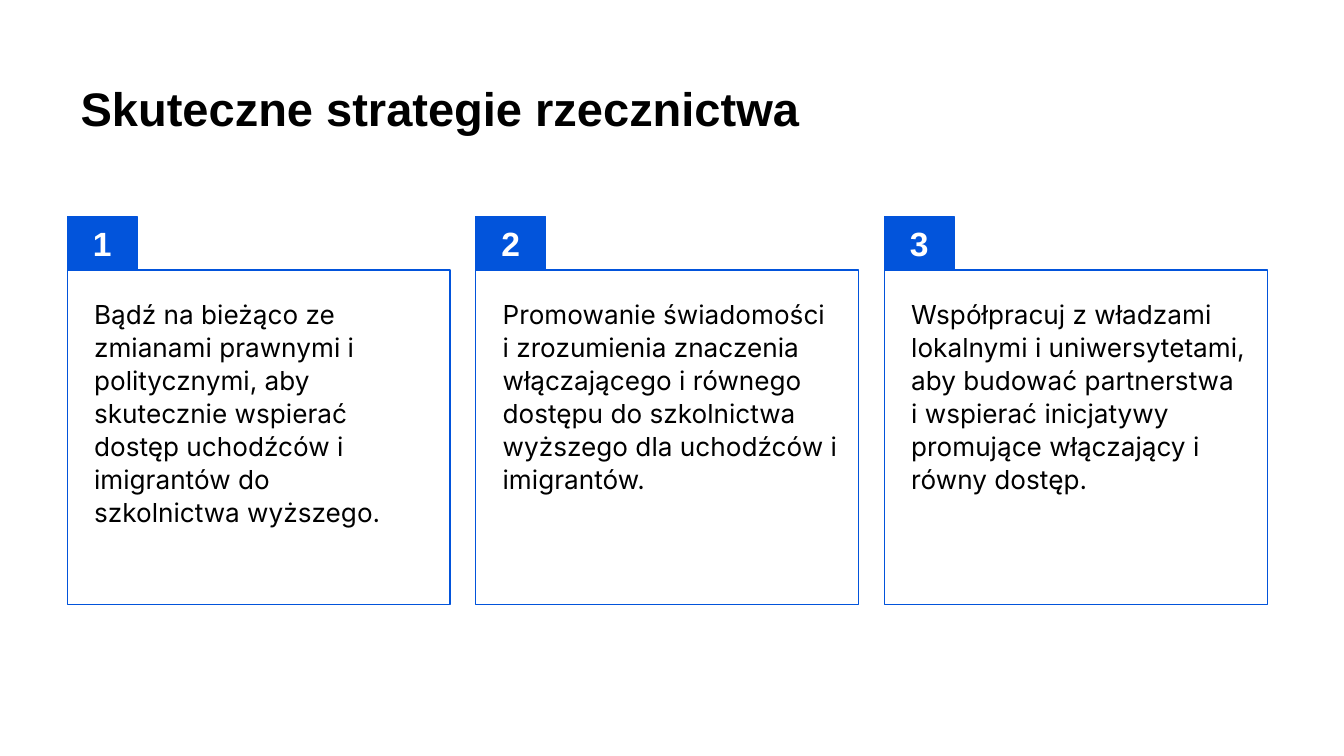
from lxml.etree import SubElement
from pptx import Presentation
from pptx.dml.color import RGBColor
from pptx.enum.shapes import MSO_SHAPE
from pptx.enum.text import MSO_ANCHOR, MSO_AUTO_SIZE, PP_ALIGN
from pptx.oxml.ns import qn
from pptx.util import Inches, Pt

COLORS = {"blue": "0254DB", "white": "FFFFFF", "black": "000000"}
LEFT, STEP, WIDTH = 0.5, 3.04, 2.85
TOP, HEIGHT, TAB = 2.01, 2.49, 0.4

# Text and right inset of each card
CARDS = [
    ("Bądź na bieżąco ze zmianami prawnymi i politycznymi, aby skutecznie "
     "wspierać dostęp uchodźców i imigrantów do szkolnictwa wyższego.", 0.2),
    ("Promowanie świadomości i zrozumienia znaczenia włączającego i równego "
     "dostępu do szkolnictwa wyższego dla uchodźców i imigrantów.", 0.15),
    ("Współpracuj z władzami lokalnymi i uniwersytetami, aby budować "
     "partnerstwa i wspierać inicjatywy promujące włączający i równy dostęp.",
     0.15),
]


def color(name):
    return RGBColor.from_string(COLORS[name])


def place(shape, left, top, width, height):
    shape.left, shape.top = Inches(left), Inches(top)
    shape.width, shape.height = Inches(width), Inches(height)


def paint(shape, fill):
    shape.fill.solid()
    shape.fill.fore_color.rgb = color(fill)
    shape.line.color.rgb = color("blue")
    shape.line.width = Pt(0.75)


def write(shape, text, font, size, ink, bold, align, anchor, insets):
    frame = shape.text_frame
    frame.text = text
    frame.word_wrap = True
    frame.auto_size = MSO_AUTO_SIZE.NONE
    frame.vertical_anchor = anchor
    (frame.margin_left, frame.margin_top,
     frame.margin_right, frame.margin_bottom) = map(Inches, insets)
    para = frame.paragraphs[0]
    para.alignment = align
    style = para.runs[0].font
    style.name, style.size, style.bold = font, Pt(size), bold
    style.color.rgb = color(ink)
    return para


def add_title(shape, text):
    place(shape, LEFT, 0.49, 9, 0.63)
    write(shape, text, "Arial", 25.2, "black", True,
          PP_ALIGN.LEFT, MSO_ANCHOR.MIDDLE, [0.1] * 4)


def add_card(shape, left, text, inset):
    place(shape, left, TOP, WIDTH, HEIGHT)
    paint(shape, "white")
    # Mostly transparent fill
    tint = shape.element.spPr.find(qn("a:solidFill"))[0]
    SubElement(tint, qn("a:alpha")).set("val", "10000")
    para = write(shape, text, "Inter", 14, "black", False,
                 PP_ALIGN.LEFT, MSO_ANCHOR.TOP, [0.2, 0.2, inset, 0.1])
    para.line_spacing = 1.05
    para.space_before, para.space_after = Pt(0), Pt(10)
    # No bullet and no hanging indent
    props = para._p.get_or_add_pPr()
    props.set("marL", "0")
    props.set("indent", "0")
    SubElement(props, qn("a:buNone"))


def add_badge(slide, left, text):
    shape = slide.shapes.add_shape(
        MSO_SHAPE.RECTANGLE, Inches(left), Inches(TOP - TAB),
        Inches(0.52), Inches(TAB))
    shape.shadow.inherit = False
    paint(shape, "blue")
    write(shape, text, "Arial", 18, "white", True,
          PP_ALIGN.CENTER, MSO_ANCHOR.MIDDLE, [0, 0.1, 0, 0.1])


def main():
    # Widescreen, 16 to 9
    deck = Presentation()
    deck.slide_width = Inches(10)
    deck.slide_height = deck.slide_width * 9 // 16
    slide = deck.slides.add_slide(deck.slide_layouts.get_by_name("Comparison"))
    title, *bodies = slide.placeholders

    # Title
    add_title(title, "Skuteczne strategie rzecznictwa")

    # Numbered cards
    for i, (text, inset) in enumerate(CARDS):
        left = LEFT + i * STEP
        add_card(bodies[i], left, text, inset)
        add_badge(slide, left, str(i + 1))

    # Unused placeholder
    spare = bodies[-1].element
    spare.getparent().remove(spare)

    deck.save("out.pptx")


if __name__ == "__main__":
    main()
